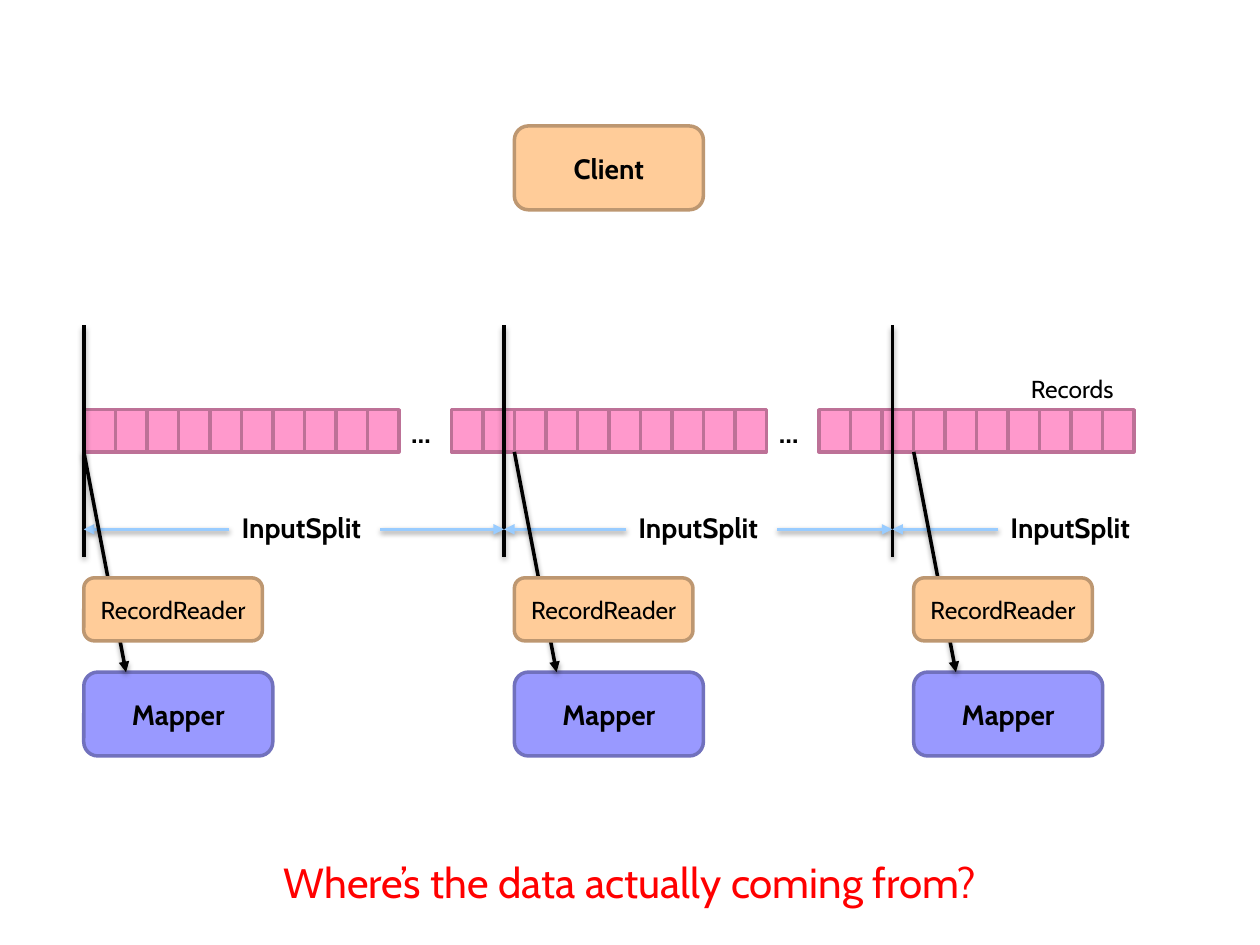
from dataclasses import dataclass

import pptx
import pptx.util
import pptx.dml.color
import pptx.enum.shapes
import pptx.enum.text
import pptx.oxml
import pptx.oxml.ns

Cm, Pt = pptx.util.Cm, pptx.util.Pt
SHAPE = pptx.enum.shapes.MSO_SHAPE
ALIGN = pptx.enum.text.PP_ALIGN


@dataclass(frozen=True)
class Theme:
    font: str = "Cabin"
    black: str = "000000"
    question: str = "FF0000"
    arrow: str = "99CCFF"
    # Each pair is a fill and its outline
    record: tuple = ("FF99CC", "BD7197")
    reader: tuple = ("FFCC99", "BD9771")
    mapper: tuple = ("9999FF", "7171BD")
    small: int = 14
    normal: int = 16
    large: int = 24
    line: int = 2


THEME = Theme()
SHADOW = (
    f'<a:effectLst {pptx.oxml.ns.nsdecls("a")}>'
    '<a:outerShdw blurRad="39370" dist="{dist}" dir="5400000" rotWithShape="0">'
    '<a:srgbClr val="000000"><a:alpha val="{alpha}"/></a:srgbClr>'
    '</a:outerShdw></a:effectLst>'
)
TRIANGLE = f'<a:tailEnd {pptx.oxml.ns.nsdecls("a")} type="triangle"/>'


def rgb(color):
    return pptx.dml.color.RGBColor.from_string(color)


def write(sp, text, size, bold=False, color=THEME.black, align=ALIGN.LEFT):
    tf = sp.text_frame
    tf.text = text
    p = tf.paragraphs[0]
    p.alignment = align
    font = p.runs[0].font
    font.name, font.size, font.bold = THEME.font, Pt(size), bold
    font.color.rgb = rgb(color)


def add_box(shapes, kind, box, colors, text="", size=THEME.normal, bold=False):
    sp = shapes.add_shape(kind, *map(Cm, box))
    sp.shadow.inherit = False
    sp.fill.solid()
    sp.fill.fore_color.rgb = rgb(colors[0])
    sp.line.color.rgb = rgb(colors[1])
    sp.line.width = Pt(THEME.line)
    if text:
        tf = sp.text_frame
        tf.margin_left = tf.margin_right = 0
        tf.vertical_anchor = pptx.enum.text.MSO_ANCHOR.MIDDLE
        write(sp, text, size, bold, align=ALIGN.CENTER)


def add_label(shapes, box, text, size, wrap=False, **style):
    sp = shapes.add_textbox(*map(Cm, box))
    sp.text_frame.word_wrap = wrap
    sp.text_frame.auto_size = pptx.enum.text.MSO_AUTO_SIZE.SHAPE_TO_FIT_TEXT
    write(sp, text, size, **style)


def add_line(shapes, start, end, color=THEME.black, arrow=True):
    straight = pptx.enum.shapes.MSO_CONNECTOR.STRAIGHT
    c = shapes.add_connector(straight, *map(Cm, start + end))
    c.line.color.rgb = rgb(color)
    c.line.width = Pt(THEME.line)
    if arrow:
        c.line._get_or_add_ln().append(pptx.oxml.parse_xml(TRIANGLE))
    dist, alpha = (20320, 38000) if arrow else (22860, 35000)
    shadow = SHADOW.format(dist=dist, alpha=alpha)
    c._element.spPr.append(pptx.oxml.parse_xml(shadow))


def add_records(s, box, count=10):
    """A row of equal record cells that fills the box."""
    x, y, w, h = box
    cell = w / count
    for i in range(count):
        add_box(s.shapes, SHAPE.RECTANGLE, (x + i * cell, y, cell, h), THEME.record)


def add_split(s, box, label_dx, closed):
    """A split label with arrows to its left and, if closed, right boundary."""
    x, y, w, h = box
    shapes = s.shapes.add_group_shape().shapes
    label_x, arrow_y = x + label_dx, y + 0.51
    add_line(shapes, (label_x, arrow_y), (x, arrow_y), THEME.arrow)
    if closed:
        add_line(shapes, (label_x + 3.05, arrow_y), (x + w, arrow_y), THEME.arrow)
    add_label(shapes, (label_x, y, 3.33, h), "InputSplit", THEME.normal, bold=True)


def add_reader(s, box):
    """An arrow from the records through a reader to a mapper."""
    x, y, w, h = box
    shapes = s.shapes.add_group_shape().shapes
    mapper_h = 1.69
    mapper_y = y + h - mapper_h
    add_box(shapes, SHAPE.ROUNDED_RECTANGLE, (x, mapper_y, w, mapper_h),
            THEME.mapper, "Mapper", bold=True)
    add_line(shapes, (x, y), (x + 0.85, mapper_y))
    add_box(shapes, SHAPE.ROUNDED_RECTANGLE, (x, y + 2.54, 3.6, 1.27),
            THEME.reader, "RecordReader", THEME.small)


def main():
    prs = pptx.Presentation()
    prs.slide_width, prs.slide_height = Cm(25.4), Cm(19.05)
    s = prs.slides.add_slide(prs.slide_layouts[6])

    # Record rows, with an ellipsis in each gap
    row_y, row_w, row_h = 8.26, 6.35, 0.85
    rows = (1.69, 9.1, 16.51)
    for x in rows:
        add_records(s, (x, row_y, row_w, row_h))
    for x in rows[:-1]:
        add_label(s.shapes, (x + row_w, row_y, 1.09, 0.94), "…", THEME.normal, bold=True)

    # Split boundaries
    bounds = (1.69, 10.16, 17.99)
    for x in bounds:
        add_line(s.shapes, (x, 6.56), (x, 11.22), arrow=False)

    # Splits, the last one open to the right
    ends = bounds[1:] + (rows[-1] + row_w,)
    for x, end, label_dx in zip(bounds, ends, (2.93, 2.46, 2.13)):
        add_split(s, (x, 10.16, end - x, 0.94), label_dx, closed=end in bounds)

    # Client and the records caption
    add_box(s.shapes, SHAPE.ROUNDED_RECTANGLE, (10.37, 2.54, 3.81, 1.69),
            THEME.reader, "Client", bold=True)
    add_label(s.shapes, (20.53, 7.41, 2.18, 0.86), "Records", THEME.small)

    # Readers and mappers
    for x in (1.69, 10.37, 18.42):
        add_reader(s, (x, row_y + row_h, 3.81, 6.13))

    # Closing question
    add_label(s.shapes, (0, 17.15, 25.4, 1.27), "Where’s the data actually coming from?",
              THEME.large, wrap=True, color=THEME.question, align=ALIGN.CENTER)

    prs.save("out.pptx")


if __name__ == "__main__":
    main()
